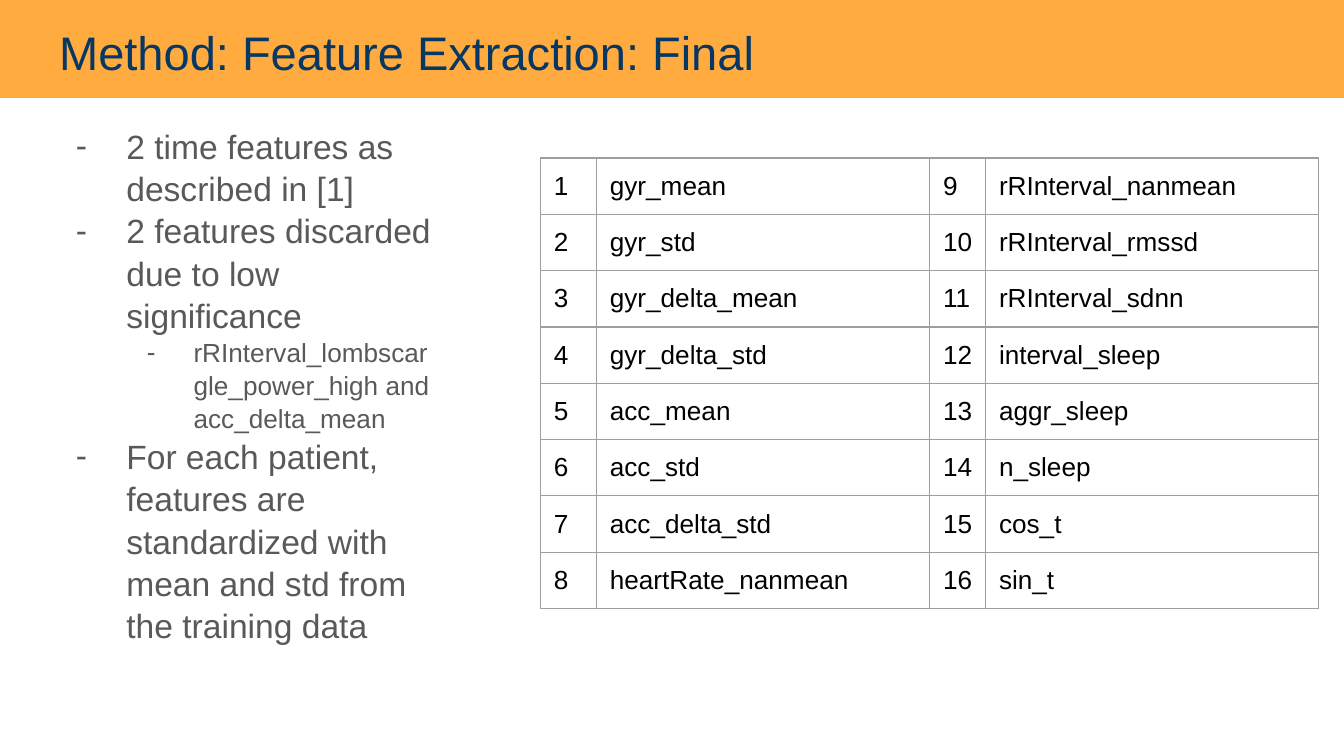
from lxml import etree
from pptx import Presentation
from pptx import util as u
from pptx.dml.color import RGBColor
from pptx.enum import shapes, text
from pptx.oxml.ns import qn

Pt = u.Pt
COLORS = {"banner": "FFAB40", "title": "073763", "body": "595959",
          "cell": "000000", "border": "9E9E9E"}
FONT = "Arial"

# Content
TITLE = "Method: Feature Extraction: Final"
POINTS = [  # (level, text)
    (0, "2 time features as described in [1]"),
    (0, "2 features discarded due to low significance"),
    (1, "rRInterval_lombscargle_power_high and acc_delta_mean"),
    (0, "For each patient, features are standardized with mean and std "
        "from the training data"),
]
LEVELS = [  # left margin, hanging indent, text size
    (36, -27, 18),
    (72, -25, 14),
]
FEATURES = [
    "gyr_mean", "gyr_std", "gyr_delta_mean", "gyr_delta_std",
    "acc_mean", "acc_std", "acc_delta_std", "heartRate_nanmean",
    "rRInterval_nanmean", "rRInterval_rmssd", "rRInterval_sdnn",
    "interval_sleep", "aggr_sleep", "n_sleep", "cos_t", "sin_t",
]
ROWS = 8
ROW_HEIGHT = 30.1
COLUMN_WIDTHS = [30, 178.5] * 2
INSET = 7.2


def rgb(name):
    return RGBColor.from_string(COLORS[name])


def write(paragraph, content, size, color):
    run = paragraph.add_run()
    run.text = content
    run.font.name = FONT
    run.font.size = Pt(size)
    run.font.color.rgb = rgb(color)
    paragraph.alignment = text.PP_ALIGN.LEFT


def place(holder, left, top, width, height, anchor):
    holder.left, holder.top = Pt(left), Pt(top)
    holder.width, holder.height = Pt(width), Pt(height)
    frame = holder.text_frame
    frame.word_wrap = True
    frame.auto_size = text.MSO_AUTO_SIZE.NONE
    frame.vertical_anchor = anchor
    frame.margin_left = frame.margin_right = Pt(INSET)
    frame.margin_top = frame.margin_bottom = Pt(INSET)
    return frame


def add_dash(paragraph, margin, indent):
    props = paragraph._p.get_or_add_pPr()
    props.set("marL", str(Pt(margin)))
    props.set("indent", str(Pt(indent)))
    color = etree.SubElement(props, qn("a:buClr"))
    etree.SubElement(color, qn("a:srgbClr"), val=COLORS["body"])
    etree.SubElement(props, qn("a:buFont"), typeface=FONT)
    etree.SubElement(props, qn("a:buChar"), char="-")


def add_borders(cell):
    props = cell._tc.get_or_add_tcPr()
    for position, side in enumerate(("lnL", "lnR", "lnT", "lnB")):
        line = etree.Element(qn("a:" + side), w=str(Pt(0.75)))
        fill = etree.SubElement(line, qn("a:solidFill"))
        etree.SubElement(fill, qn("a:srgbClr"), val=COLORS["border"])
        props.insert(position, line)


deck = Presentation()
deck.slide_width, deck.slide_height = Pt(720), Pt(405)
slide = deck.slides.add_slide(deck.slide_layouts[1])

# Banner, behind the title
banner = slide.shapes.add_shape(shapes.MSO_SHAPE.RECTANGLE,
                                Pt(0), Pt(-1.2), Pt(720), Pt(52.8))
banner.shadow.inherit = False
banner.fill.solid()
banner.fill.fore_color.rgb = rgb("banner")
banner.line.color.rgb = rgb("banner")
banner.line.width = Pt(1.5)
slide.shapes._spTree.insert(2, banner._element)

# Title
heading = place(slide.shapes.title, 24.5, 5, 671, 45.4, text.MSO_ANCHOR.MIDDLE)
write(heading.paragraphs[0], TITLE, 25.2, "title")

# Dashed list
notes = place(slide.placeholders[1], 24.5, 59, 214.5, 301, text.MSO_ANCHOR.TOP)
for number, (level, point) in enumerate(POINTS):
    paragraph = notes.add_paragraph() if number else notes.paragraphs[0]
    margin, indent, size = LEVELS[level]
    add_dash(paragraph, margin, indent)
    paragraph.level = level
    paragraph.line_spacing = 1.05
    paragraph.space_before = paragraph.space_after = Pt(0)
    write(paragraph, point, size, "body")

# Feature table: numbers run down the left pair of columns, then the right
features = slide.shapes.add_table(
    ROWS, len(COLUMN_WIDTHS), Pt(289.5), Pt(84.7),
    Pt(sum(COLUMN_WIDTHS)), Pt(ROWS * ROW_HEIGHT)).table
features.first_row = features.horz_banding = False
for column, width in zip(features.columns, COLUMN_WIDTHS):
    column.width = Pt(width)
for row in features.rows:
    row.height = Pt(ROW_HEIGHT)
for index, feature in enumerate(FEATURES):
    pair, row = divmod(index, ROWS)
    for offset, content in enumerate((str(index + 1), feature)):
        cell = features.cell(row, 2 * pair + offset)
        cell.margin_left = cell.margin_right = Pt(INSET)
        cell.margin_top = cell.margin_bottom = Pt(INSET)
        cell.fill.background()
        add_borders(cell)
        write(cell.text_frame.paragraphs[0], content, 14, "cell")

deck.save("out.pptx")
